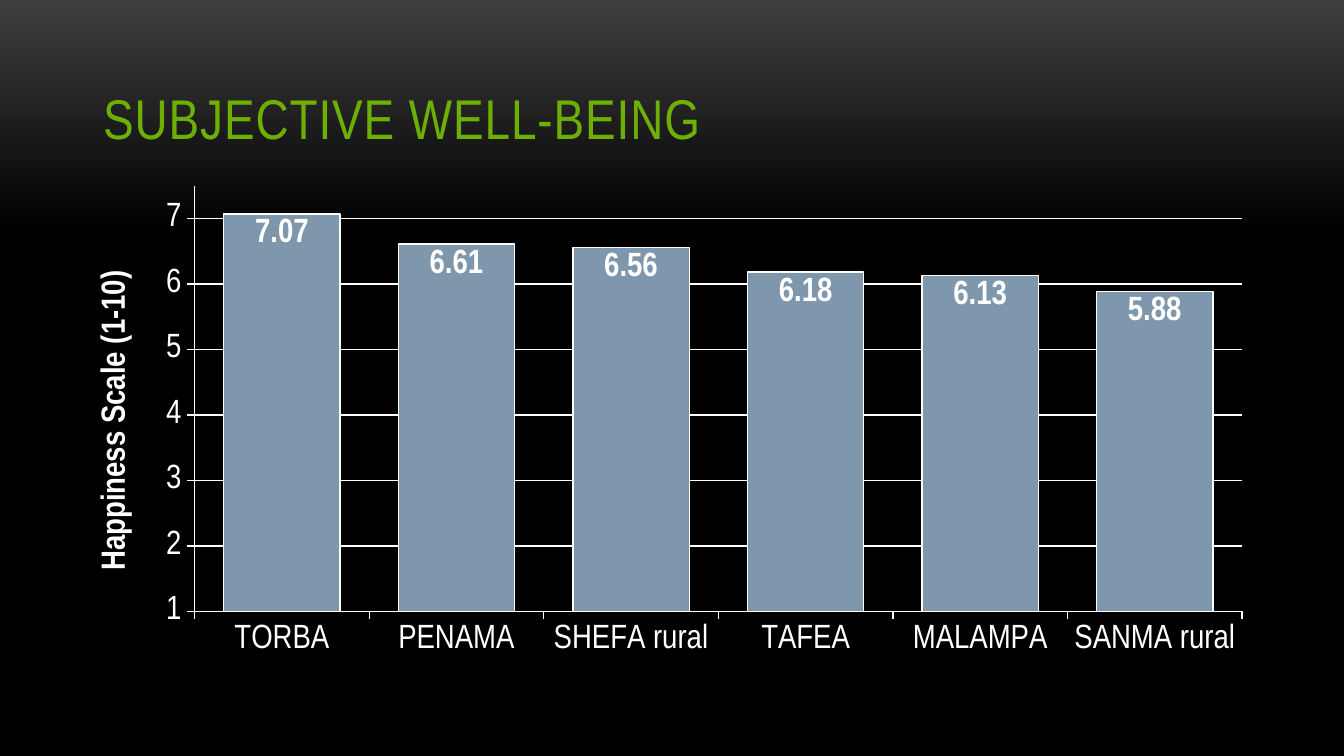
from pptx import Presentation
from pptx.chart.data import CategoryChartData
from pptx.dml.color import RGBColor
from pptx.enum.chart import XL_CHART_TYPE, XL_LABEL_POSITION, XL_TICK_MARK
from pptx.enum.text import MSO_ANCHOR
from pptx.util import Inches, Pt


def rgb(hex_string):
    return RGBColor.from_string(hex_string)


class WellBeingSlide:
    """Holds the dark slide style and adds elements to the current slide."""

    FONT = "Arial Narrow"
    GREEN, WHITE, STEEL = "6EAF05", "FFFFFF", "7E97AD"

    def __init__(self, presentation):
        self.slide = presentation.slides.add_slide(presentation.slide_layouts[6])

    def style(self, font, size, color, bold=False):
        font.name = self.FONT
        font.size = Pt(size)
        font.bold = bold
        font.color.rgb = rgb(color)

    def outline(self, line, width=0.75):
        line.color.rgb = rgb(self.WHITE)
        line.width = Pt(width)

    def background(self, top, bottom, fade_end):
        fill = self.slide.background.fill
        fill.gradient()
        fill.gradient_angle = 270
        stops = zip(fill.gradient_stops, (top, bottom), (0, fade_end))
        for stop, color, position in stops:
            stop.color.rgb = rgb(color)
            stop.position = position

    def title(self, text, left, top, width, height):
        frame = self.slide.shapes.add_textbox(
            Inches(left), Inches(top), Inches(width), Inches(height)).text_frame
        frame.word_wrap = True
        frame.vertical_anchor = MSO_ANCHOR.BOTTOM
        heading = frame.paragraphs[0]
        run = heading.add_run()
        run.text = text
        run._r.get_or_add_rPr().set("spc", "50")
        self.style(heading.font, 30, self.GREEN)

    def column_chart(self, scores, scale_title, left, top, width, height):
        data = CategoryChartData()
        data.categories = list(scores)
        data.add_series("Series 1", list(scores.values()))
        chart = self.slide.shapes.add_chart(
            XL_CHART_TYPE.COLUMN_CLUSTERED, Inches(left), Inches(top),
            Inches(width), Inches(height), data).chart
        chart.has_legend = False
        chart.has_title = False
        self.style(chart.font, 18, self.WHITE)

        scale = chart.value_axis
        for axis in (chart.category_axis, scale):
            axis.major_tick_mark = XL_TICK_MARK.OUTSIDE
            axis.minor_tick_mark = XL_TICK_MARK.NONE
            self.outline(axis.format.line)
        scale.minimum_scale, scale.maximum_scale, scale.major_unit = 1, 7.5, 1
        scale.tick_labels.number_format = "0"
        scale.tick_labels.number_format_is_linked = False
        self.outline(scale.major_gridlines.format.line)
        caption = scale.axis_title.text_frame
        caption.text = scale_title
        self.style(caption.paragraphs[0].font, 18, self.WHITE, bold=True)

        plot = chart.plots[0]
        plot.gap_width = 50
        plot.vary_by_categories = False
        columns = plot.series[0].format
        columns.fill.solid()
        columns.fill.fore_color.rgb = rgb(self.STEEL)
        self.outline(columns.line)
        labels = plot.series[0].data_labels
        labels.show_value = True
        labels.position = XL_LABEL_POSITION.INSIDE_END
        labels.number_format = "0.00"
        labels.number_format_is_linked = False
        self.style(labels.font, 18, self.WHITE, bold=True)


def main():
    presentation = Presentation()
    presentation.slide_width = Inches(10)
    presentation.slide_height = Inches(10 * 9 / 16)
    slide = WellBeingSlide(presentation)
    slide.background("3F3F3F", "000000", 0.31)
    slide.title("SUBJECTIVE WELL-BEING", 0.67, 0.23, 8.67, 0.94)
    happiness = {"TORBA": 7.07, "PENAMA": 6.61, "SHEFA rural": 6.56,
                 "TAFEA": 6.18, "MALAMPA": 6.13, "SANMA rural": 5.88}
    slide.column_chart(happiness, "Happiness Scale (1-10)", 0.5, 1.31, 8.92, 3.64)
    presentation.save("out.pptx")


if __name__ == "__main__":
    main()
